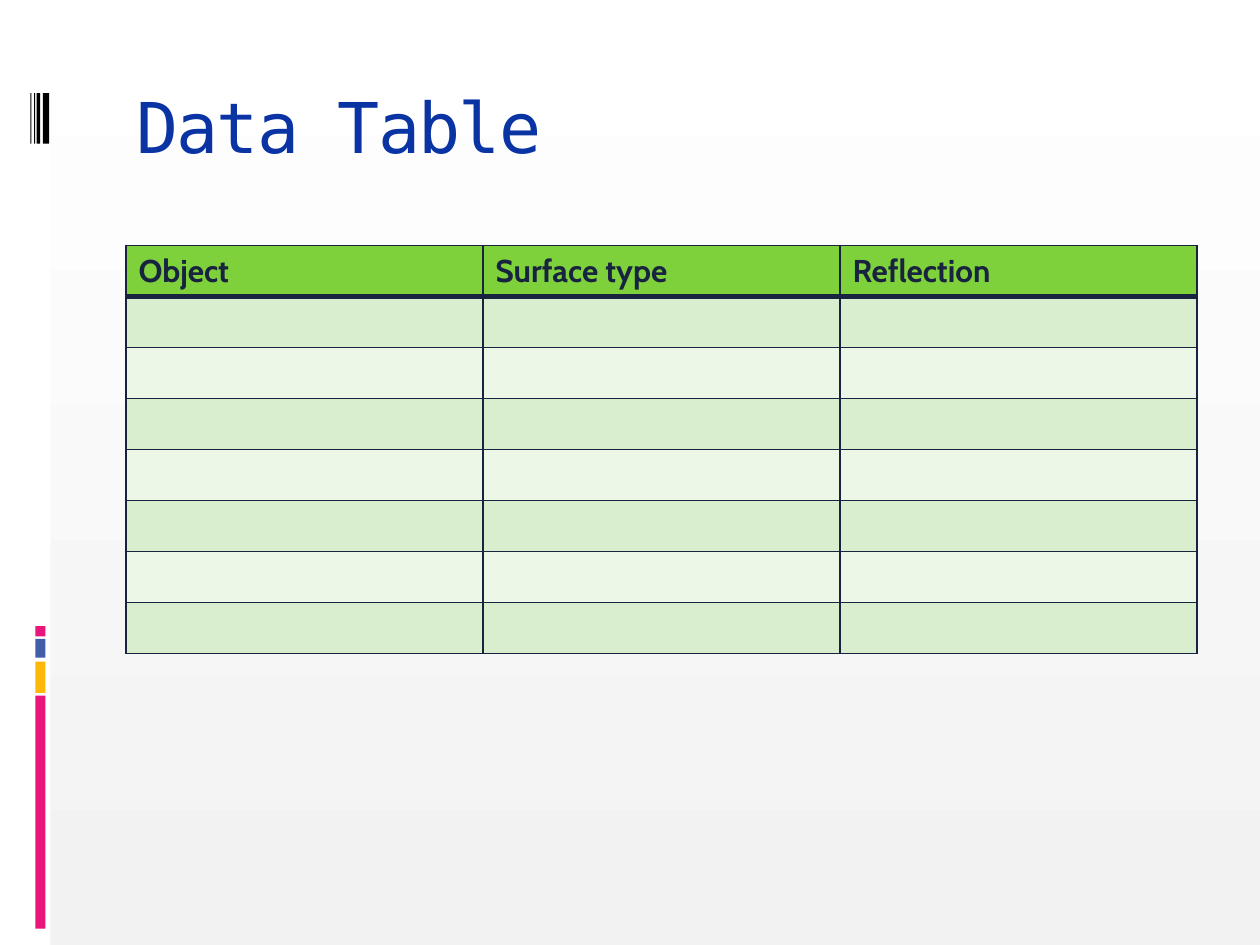
from lxml.etree import SubElement
from pptx import Presentation
from pptx.dml.color import RGBColor
from pptx.enum.shapes import MSO_SHAPE as Shape
from pptx.enum.text import MSO_ANCHOR as Anchor
from pptx.oxml.ns import qn
from pptx.util import Inches, Pt

WHITE = RGBColor(0xFF, 0xFF, 0xFF)
PALE_GREY = RGBColor(0xF2, 0xF2, 0xF2)
BLACK = RGBColor(0x00, 0x00, 0x00)
PINK = RGBColor(0xEA, 0x15, 0x7A)
AMBER = RGBColor(0xFE, 0xB8, 0x0A)
BLUE = RGBColor(0x42, 0x5E, 0xA9)
TITLE_BLUE = RGBColor(0x0A, 0x34, 0xA4)
NAVY = RGBColor(0x18, 0x23, 0x3F)
GREEN = RGBColor(0x7F, 0xD1, 0x3B)
BANDS = [RGBColor(0xEC, 0xF7, 0xE8), RGBColor(0xD8, 0xEE, 0xCE)]

HEADINGS = ["Object", "Surface type", "Reflection"]
ROWS = 8
TABLE_LEFT, TABLE_TOP, TABLE_WIDTH, TABLE_HEIGHT = 1, 1.95, 8.5, 3.24


def add_bar(page, left, top, width, height, colour):
    bar = page.shapes.add_shape(
        Shape.RECTANGLE, Inches(left), Inches(top), Inches(width), Inches(height))
    bar.shadow.inherit = False
    bar.fill.solid()
    bar.fill.fore_color.rgb = colour
    bar.line.fill.background()


def add_border(cell, side, points):
    line = SubElement(cell._tc.get_or_add_tcPr(), qn(f"a:ln{side}"), w=str(Pt(points)))
    fill = SubElement(line, qn("a:solidFill"))
    SubElement(fill, qn("a:srgbClr"), val=str(NAVY))


deck = Presentation()
deck.slide_width = Inches(10)
deck.slide_height = Inches(7.5)
page = deck.slides.add_slide(deck.slide_layouts[6])

backdrop = page.background.fill
backdrop.gradient()
backdrop.gradient_angle = 270
for stop, colour in zip(backdrop.gradient_stops, [WHITE, PALE_GREY]):
    stop.color.rgb = colour

add_bar(page, 0, 0, 0.4, 7.5, WHITE)
for top, height, colour in [(5.52, 1.85, PINK), (5.25, 0.25, AMBER),
                            (5.07, 0.15, BLUE), (4.97, 0.08, PINK)]:
    add_bar(page, 0.28, top, 0.08, height, colour)
for left, width in [(0.34, 0.05), (0.29, 0.03), (0.27, 0.01), (0.24, 0.01)]:
    add_bar(page, left, 0.74, width, 0.4, BLACK)

title = page.shapes.add_textbox(Inches(1), Inches(0.56), Inches(8.5), Inches(1))
frame = title.text_frame
frame.word_wrap = True
frame.vertical_anchor = Anchor.TOP
frame.margin_left = Inches(0.08)
frame.margin_top = Inches(0.1)
span = frame.paragraphs[0].add_run()
span.text = "Data Table"
span.font.name = "DejaVu Sans Mono"
span.font.size = Pt(40)
span.font.color.rgb = TITLE_BLUE
span._r.get_or_add_rPr().set("spc", "-100")

table = page.shapes.add_table(
    ROWS, len(HEADINGS), Inches(TABLE_LEFT), Inches(TABLE_TOP),
    Inches(TABLE_WIDTH), Inches(TABLE_HEIGHT)).table
for row in range(ROWS):
    for column, heading in enumerate(HEADINGS):
        cell = table.cell(row, column)
        borders = {"L": 1, "R": 1, "T": 3 if row == 1 else 1, "B": 3 if row == 0 else 1}
        for side, points in borders.items():
            add_border(cell, side, points)
        cell.fill.solid()
        cell.fill.fore_color.rgb = BANDS[row % 2] if row else GREEN
        if row == 0:
            span = cell.text_frame.paragraphs[0].add_run()
            span.text = heading
            span.font.name = "Cabin"
            span.font.size = Pt(18)
            span.font.bold = True
            span.font.color.rgb = NAVY

deck.save("out.pptx")
